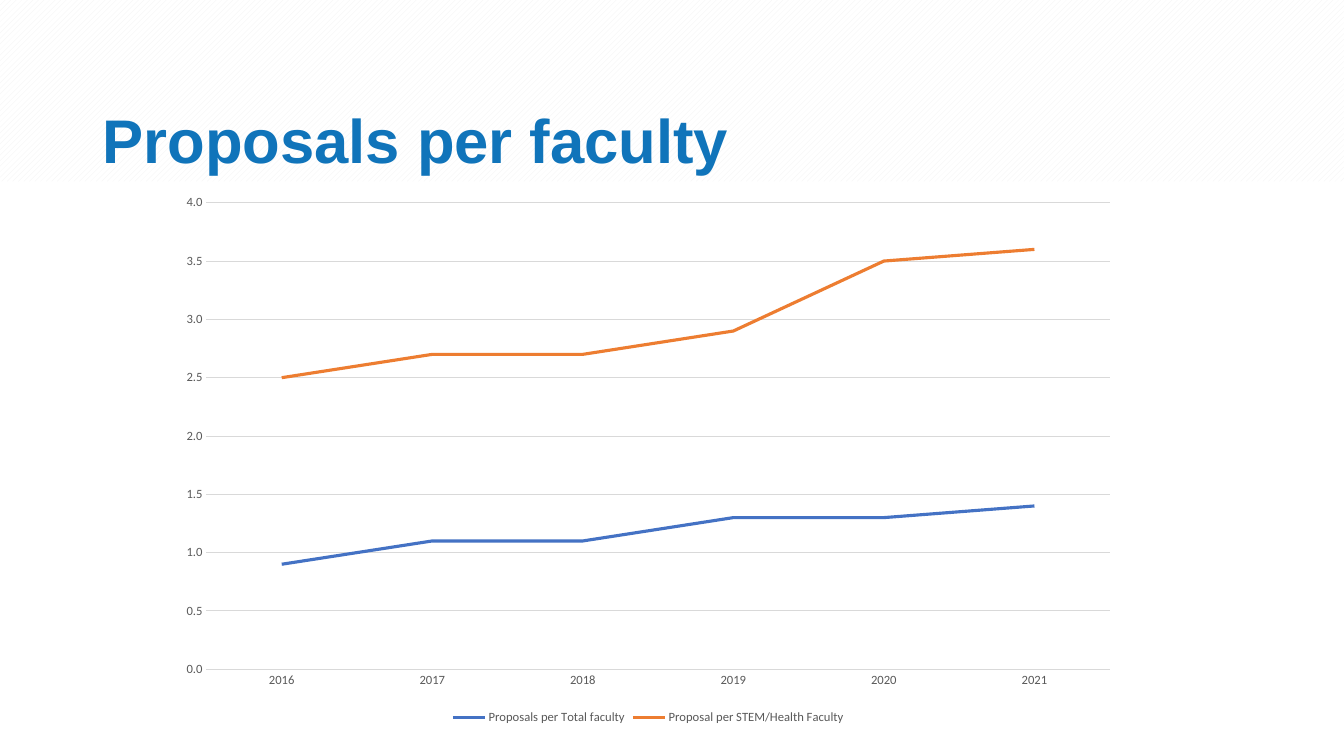
from pptx import Presentation
from pptx.chart import data
from pptx.dml import color
from pptx.enum import chart as charts, dml, shapes, text
from pptx.util import Pt

YEARS = ["2016", "2017", "2018", "2019", "2020", "2021"]
SERIES = [
    ("Proposals per Total faculty", "4472C4", [0.9, 1.1, 1.1, 1.3, 1.3, 1.4]),
    ("Proposal per STEM/Health Faculty", "ED7D31", [2.5, 2.7, 2.7, 2.9, 3.5, 3.6]),
]


def paint(target, shade):
    """Give a colour format the colour of a hex string."""
    target.rgb = color.RGBColor.from_string(shade)


def set_font(font, name, size, shade, bold=False):
    """Format a font in one go."""
    font.name, font.size, font.bold = name, Pt(size), bold
    paint(font.color, shade)


def draw_line(line, shade, width):
    """Give a line a solid colour and a width."""
    line.fill.solid()
    paint(line.color, shade)
    line.width = Pt(width)


def add_header(page, left, top, width, height):
    """Place the hatched band with the title at its foot."""
    band = page.shapes.add_shape(
        shapes.MSO_SHAPE.RECTANGLE, Pt(left), Pt(top), Pt(width), Pt(height))
    band.shadow.inherit = False
    band.line.fill.background()
    band.fill.patterned()
    band.fill.pattern = dml.MSO_PATTERN.WIDE_UPWARD_DIAGONAL
    paint(band.fill.fore_color, "F2F2F2")
    paint(band.fill.back_color, "FFFFFF")

    title = page.shapes.title
    title.element.addprevious(band.element)
    title.left, title.top = Pt(left + 66), Pt(top + 28.8)
    title.width, title.height = Pt(width - 132), Pt(height - 28.8)
    frame = title.text_frame
    frame.text = "Proposals per faculty"
    frame.word_wrap = True
    frame.auto_size = text.MSO_AUTO_SIZE.NONE
    frame.vertical_anchor = text.MSO_ANCHOR.BOTTOM
    para = frame.paragraphs[0]
    para.alignment = text.PP_ALIGN.LEFT
    para.line_spacing = 0.9
    set_font(para.runs[0].font, "Arial", 44, "1074BA", True)


def add_line_chart(page, left, top, width, height):
    """Place the line chart of proposals by year."""
    table = data.CategoryChartData(number_format="0.0")
    table.categories = YEARS
    for name, shade, values in SERIES:
        table.add_series(name, values)
    chart = page.shapes.add_chart(
        charts.XL_CHART_TYPE.LINE, Pt(left), Pt(top), Pt(width), Pt(height), table).chart
    set_font(chart.font, "Calibri", 10, "000000")
    chart.has_title = False
    chart.has_legend = True
    chart.legend.position = charts.XL_LEGEND_POSITION.BOTTOM
    chart.legend.include_in_layout = False
    set_font(chart.legend.font, "Calibri", 9, "595959")

    for axis in (chart.category_axis, chart.value_axis):
        axis.major_tick_mark = axis.minor_tick_mark = charts.XL_TICK_MARK.NONE
        set_font(axis.tick_labels.font, "Calibri", 9, "595959")
    draw_line(chart.category_axis.format.line, "D9D9D9", 0.75)
    scale = chart.value_axis
    scale.minimum_scale, scale.maximum_scale, scale.major_unit = 0, 4, 0.5
    scale.tick_labels.number_format = "0.0"
    scale.tick_labels.number_format_is_linked = False
    scale.format.line.fill.background()
    scale.has_major_gridlines = True
    draw_line(scale.major_gridlines.format.line, "D9D9D9", 0.75)

    plot = chart.plots[0]
    plot.vary_by_categories = False
    for series, (name, shade, values) in zip(plot.series, SERIES):
        series.smooth = False
        series.marker.style = charts.XL_MARKER_STYLE.NONE
        draw_line(series.format.line, shade, 2.25)


def main():
    """Build the deck and save it."""
    deck = Presentation()
    deck.slide_width, deck.slide_height = Pt(960), Pt(540)
    page = deck.slides.add_slide(deck.slide_layouts.get_by_name("Title Only"))
    add_header(page, 0, 0, 960, 129.6)
    add_line_chart(page, 119.5, 131.8, 686.9, 388.8)
    deck.save("out.pptx")


if __name__ == "__main__":
    main()
